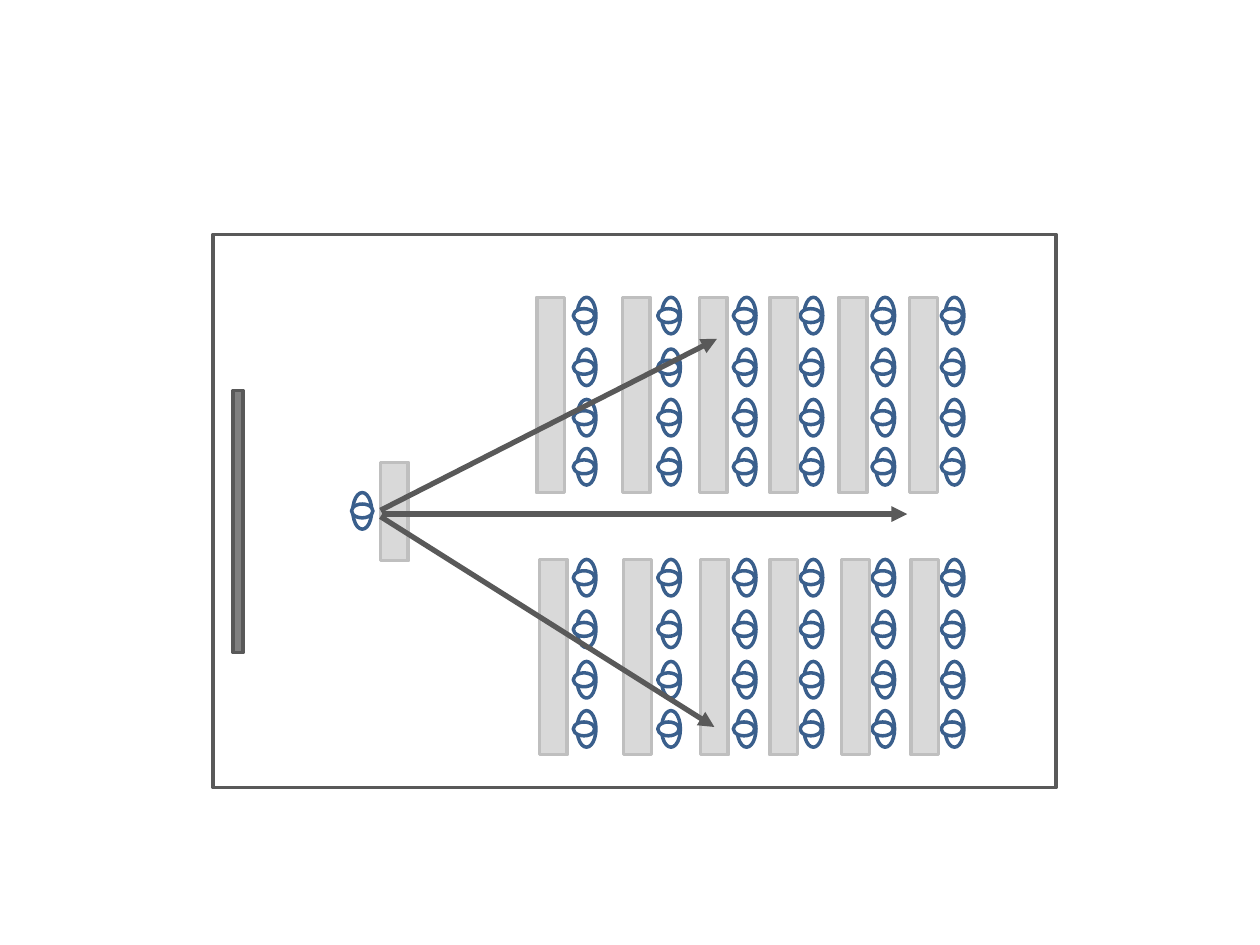
from lxml import etree
from pptx import Presentation
from pptx.dml.color import RGBColor
from pptx.enum.shapes import MSO_CONNECTOR, MSO_SHAPE
from pptx.oxml.ns import qn
from pptx.util import Inches, Pt

COLORS = {
    "wall": "595959", "board": "808080", "desk": "D9D9D9",
    "desk_edge": "BFBFBF", "person": "3A5F8C", "head": "FFFFFF",
}
ROOM = (1.69, 1.86, 6.69, 4.39)
BOARD = (1.85, 3.1, 0.08, 2.08)
TEACHER = (2.8, 3.91)
TEACHER_DESK = (3.02, 3.67, 0.22, 0.78)

SEAT_COLUMNS = [4.58, 5.25, 5.85, 6.38, 6.95, 7.5]
SEAT_ROWS = [0, 0.41, 0.81, 1.2]  # below the top of a block
BLOCKS = [  # top, left of each desk
    (2.36, [4.26, 4.94, 5.55, 6.11, 6.66, 7.22]),
    (4.44, [4.28, 4.95, 5.56, 6.11, 6.68, 7.23]),
]
DESK_W, DESK_H = 0.22, 1.55
BODY_W, BODY_H = 0.15, 0.29
HEAD_W, HEAD_H = 0.11, 0.17

SIGHT_LINES = [  # from, to
    ((3.02, 4.05), (5.69, 2.69)),
    ((3.03, 4.08), (7.2, 4.08)),
    ((3.02, 4.1), (5.67, 5.77)),
]


def add_outline(shapes, kind, box, line, fill=None):
    sp = shapes.add_shape(kind, *map(Inches, box))
    sp.shadow.inherit = False
    if fill:
        sp.fill.solid()
        sp.fill.fore_color.rgb = RGBColor.from_string(COLORS[fill])
    else:
        sp.fill.background()
    sp.line.color.rgb = RGBColor.from_string(COLORS[line])
    sp.line.width = Pt(2)
    return sp


def add_desk(shapes, box):
    add_outline(shapes, MSO_SHAPE.RECTANGLE, box, "desk_edge", "desk")


def add_person(shapes, x, y, head_shift, rotation):
    """Seen from above: an upright body and a head turned on its side."""
    add_outline(shapes, MSO_SHAPE.OVAL, (x, y, BODY_W, BODY_H), "person")
    head_y = y + (BODY_H - HEAD_H) / 2
    head = add_outline(shapes, MSO_SHAPE.OVAL,
                       (x + head_shift, head_y, HEAD_W, HEAD_H), "person", "head")
    head.rotation = rotation


def add_arrow(shapes, start, end):
    cx = shapes.add_connector(MSO_CONNECTOR.STRAIGHT, *map(Inches, start + end))
    cx.line.color.rgb = RGBColor.from_string(COLORS["wall"])
    cx.line.width = Pt(3)
    etree.SubElement(cx.line._get_or_add_ln(), qn("a:tailEnd"), type="triangle")
    etree.SubElement(cx._element.spPr, qn("a:effectLst"))


prs = Presentation()
prs.slide_width, prs.slide_height = Inches(10), Inches(7.5)
s = prs.slides.add_slide(prs.slide_layouts[6])

add_outline(s.shapes, MSO_SHAPE.RECTANGLE, ROOM, "wall")

teacher = s.shapes.add_group_shape().shapes
add_person(teacher, *TEACHER, head_shift=0.02, rotation=270)
add_desk(teacher, TEACHER_DESK)

audience = s.shapes.add_group_shape().shapes
for top, _ in BLOCKS:
    for x in SEAT_COLUMNS:
        for row in SEAT_ROWS:
            add_person(audience, x, top + row, head_shift=0, rotation=90)
for top, desks in BLOCKS:
    for x in desks:
        add_desk(audience, (x, top, DESK_W, DESK_H))

sight = s.shapes.add_group_shape().shapes
for start, end in SIGHT_LINES:
    add_arrow(sight, start, end)

add_outline(s.shapes, MSO_SHAPE.RECTANGLE, BOARD, "wall", "board")

prs.save("out.pptx")
